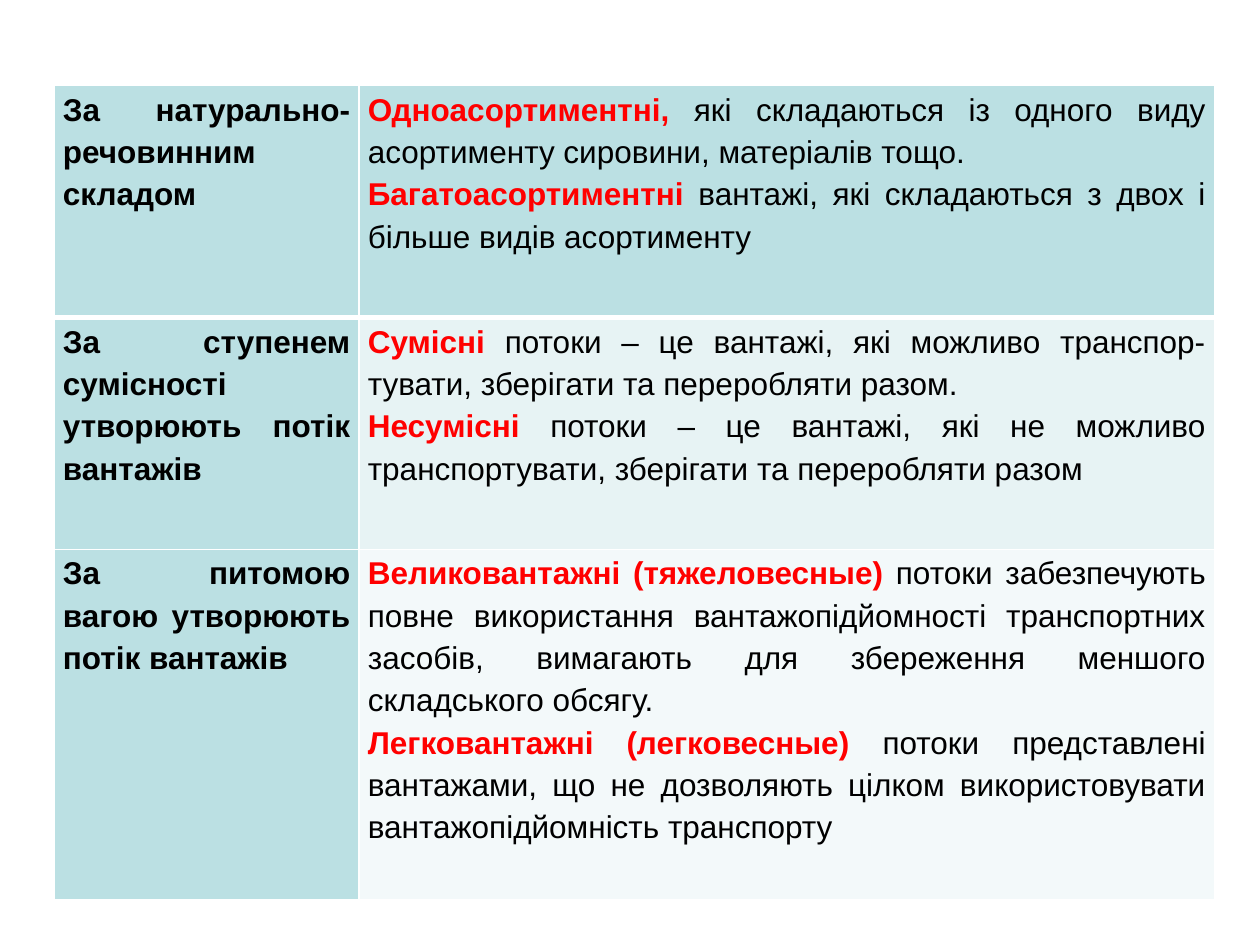
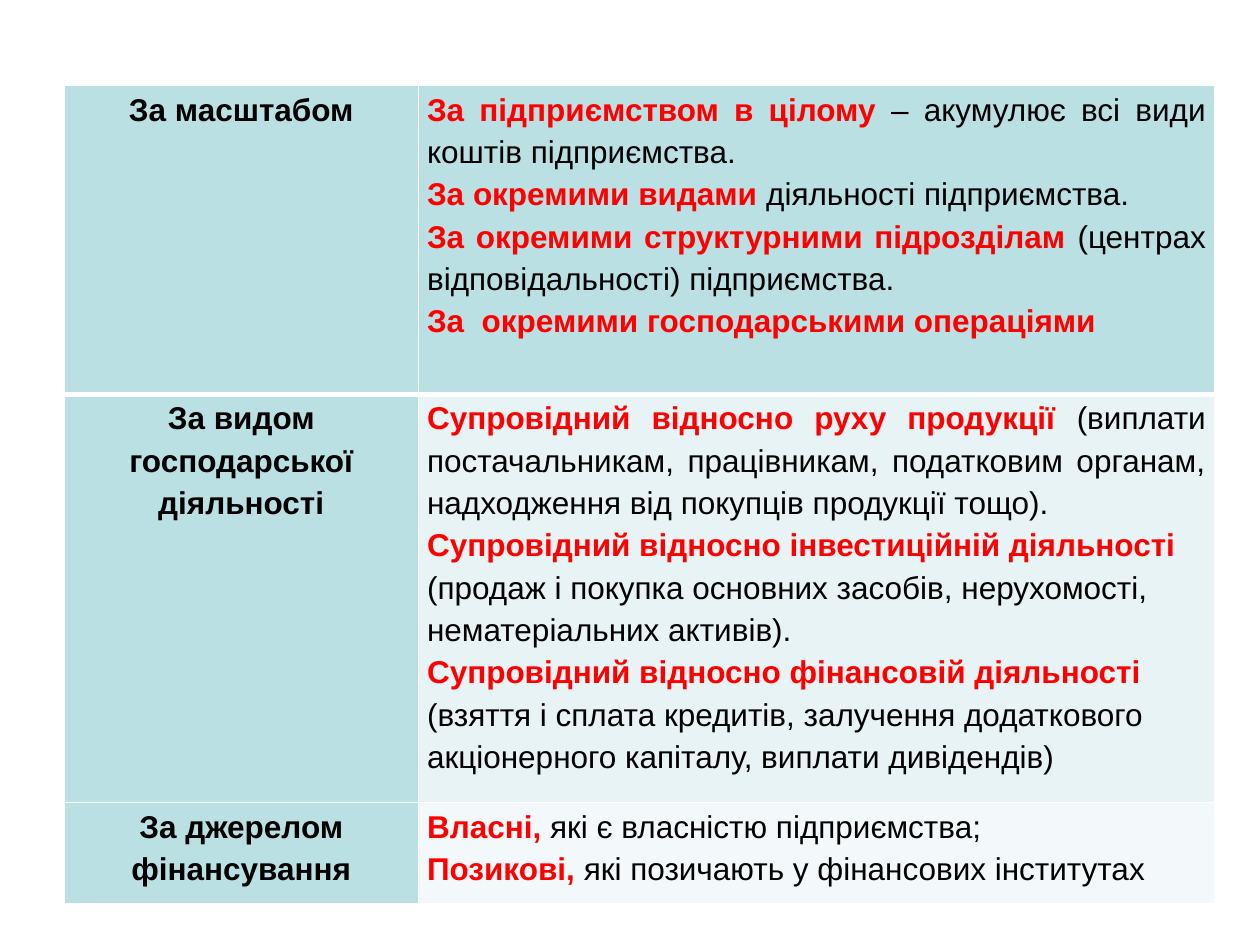
from lxml.etree import SubElement
from pptx import Presentation
from pptx.dml.color import RGBColor
from pptx.enum.text import MSO_ANCHOR, PP_ALIGN as Align
from pptx.oxml.ns import qn
from pptx.util import Inches, Pt

COLORS = {
    "text": "000000",
    "term": "FF0000",
    "border": "FFFFFF",
    "heading": "BBE0E3",
    "row_middle": "E7F3F4",
    "row_last": "F3F9FA",
}
DETAIL_FILLS = ["heading", "row_middle", "row_last"]
FONT = "Arial"
FONT_SIZE = 18
LINE_SPACING = 1.2
SIDE_MARGIN = 0.07
THIN, THICK = 1, 3

# Each row: heading, then (term, explanation, alignment) per paragraph.
CARGO_ROWS = [
    ("За натурально-речовинним складом", [
        ("Одноасортиментні, ",
         "які складаються із одного виду асортименту сировини, матеріалів тощо. ",
         Align.JUSTIFY),
        ("Багатоасортиментні ",
         "вантажі, які складаються з двох і більше видів асортименту ",
         Align.JUSTIFY),
    ]),
    ("За ступенем сумісності утворюють потік вантажів", [
        ("Сумісні",
         " потоки – це вантажі, які можливо транспор-тувати, зберігати та переробляти разом.",
         Align.JUSTIFY),
        ("Несумісні",
         " потоки – це вантажі, які не можливо транспортувати, зберігати та переробляти разом",
         Align.JUSTIFY),
    ]),
    ("За питомою вагою утворюють потік вантажів", [
        ("Великовантажні (тяжеловесные) ",
         "потоки забезпечують повне використання вантажопідйомності транспортних засобів, "
         "вимагають для збереження меншого складського обсягу. ",
         Align.JUSTIFY),
        ("Легковантажні (легковесные) ",
         "потоки представлені вантажами, що не дозволяють цілком використовувати "
         "вантажопідйомність транспорту ",
         Align.JUSTIFY),
    ]),
]

FINANCE_ROWS = [
    ("За масштабом", [
        ("За підприємством в цілому ",
         "– акумулює всі види коштів підприємства.", Align.JUSTIFY),
        ("За окремими видами ", "діяльності підприємства.", Align.JUSTIFY),
        ("За окремими структурними підрозділам ",
         "(центрах відповідальності) підприємства.", Align.JUSTIFY),
        ("За  окремими господарськими операціями", "", Align.JUSTIFY),
    ]),
    ("За видом господарської діяльності", [
        ("Супровідний відносно руху продукції ",
         "(виплати постачальникам, працівникам, податковим органам, "
         "надходження від покупців продукції тощо).", Align.JUSTIFY),
        ("Супровідний відносно інвестиційній діяльності ",
         "(продаж і покупка основних засобів, нерухомості, нематеріальних активів).",
         Align.LEFT),
        ("Супровідний відносно фінансовій діяльності ",
         "(взяття і сплата кредитів, залучення додаткового акціонерного капіталу, "
         "виплати дивідендів)", Align.LEFT),
    ]),
    ("За джерелом фінансування", [
        ("Власні, ", "які є власністю підприємства;", Align.JUSTIFY),
        ("Позикові, ", "які позичають у фінансових інститутах", Align.JUSTIFY),
    ]),
]


def add_run(para, text, color, bold):
    run = para.add_run()
    run.text = text
    run.font.name = FONT
    run.font.size = Pt(FONT_SIZE)
    run.font.bold = bold
    run.font.color.rgb = RGBColor.from_string(COLORS[color])


def set_borders(cell, widths):
    """Draw the cell's left, right, top and bottom borders; widths are in points."""
    properties = cell._tc.get_or_add_tcPr()
    for index, (side, width) in enumerate(widths.items()):
        line = SubElement(properties, qn(f"a:{side}"), w=str(Pt(width)))
        fill = SubElement(line, qn("a:solidFill"))
        SubElement(fill, qn("a:srgbClr"), val=COLORS["border"])
        properties.remove(line)
        properties.insert(index, line)  # borders come before the fill


def format_cell(cell, fill, row, column):
    cell.margin_left = cell.margin_right = Inches(SIDE_MARGIN)
    cell.margin_top = cell.margin_bottom = 0
    cell.vertical_anchor = MSO_ANCHOR.TOP
    cell.fill.solid()
    cell.fill.fore_color.rgb = RGBColor.from_string(COLORS[fill])
    set_borders(cell, {
        "lnL": THIN,
        "lnR": THIN,
        "lnT": THICK if row == 1 else THIN,
        "lnB": THICK if row == 0 else THIN,
    })


def write_paragraphs(cell, paragraphs):
    """Fill the cell; each paragraph is an alignment and its (text, color, bold) runs."""
    frame = cell.text_frame
    for index, (alignment, runs) in enumerate(paragraphs):
        para = frame.add_paragraph() if index else frame.paragraphs[0]
        para.alignment = alignment
        para.line_spacing = LINE_SPACING
        for text, color, bold in runs:
            if text:
                add_run(para, text, color, bold)


def add_classification_slide(deck, rows, box, heading_width, row_heights, heading_align):
    page = deck.slides.add_slide(deck.slide_layouts[6])
    left, top, width = box
    frame = page.shapes.add_table(
        len(rows), 2, Inches(left), Inches(top), Inches(width), Inches(sum(row_heights)))
    table = frame.table
    table.columns[0].width = Inches(heading_width)
    table.columns[1].width = Inches(width - heading_width)

    for row, (heading, details) in enumerate(rows):
        table.rows[row].height = Inches(row_heights[row])
        heading_cell, detail_cell = table.cell(row, 0), table.cell(row, 1)
        format_cell(heading_cell, "heading", row, 0)
        format_cell(detail_cell, DETAIL_FILLS[row], row, 1)
        write_paragraphs(heading_cell, [(heading_align, [(heading, "text", True)])])
        write_paragraphs(detail_cell, [
            (alignment, [(term, "term", True), (explanation, "text", False)])
            for term, explanation, alignment in details])


def main():
    deck = Presentation()
    deck.slide_width, deck.slide_height = Inches(10), Inches(7.5)
    add_classification_slide(
        deck, CARGO_ROWS, (0.43, 0.68, 9.21), 2.42, [1.84, 1.84, 2.78], Align.JUSTIFY)
    add_classification_slide(
        deck, FINANCE_ROWS, (0.51, 0.68, 9.13), 2.81, [2.45, 3.24, 0.8], Align.CENTER)
    deck.save("out.pptx")


if __name__ == "__main__":
    main()
